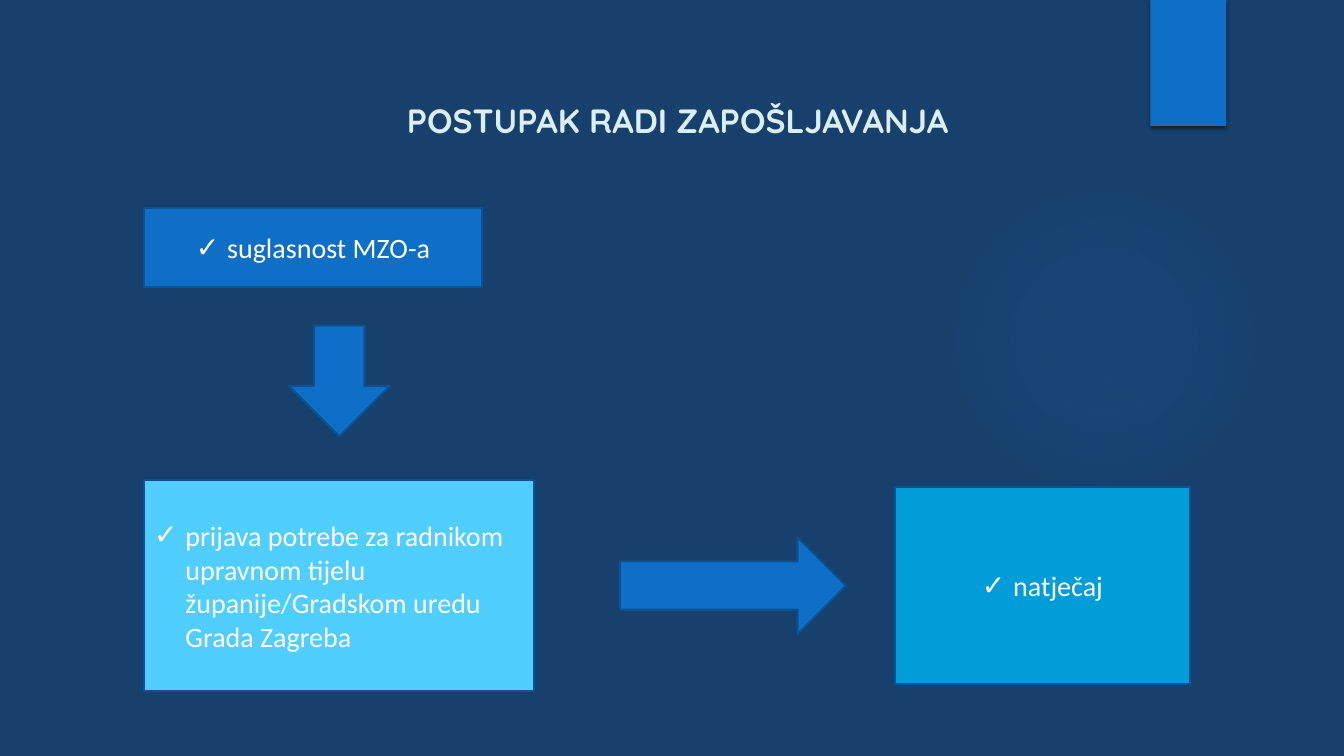
from collections import namedtuple

from lxml.etree import SubElement
from pptx import Presentation
from pptx.dml.color import RGBColor
from pptx.enum.shapes import MSO_SHAPE
from pptx.enum.text import MSO_ANCHOR, PP_ALIGN
from pptx.oxml import parse_xml
from pptx.oxml.ns import nsdecls, qn
from pptx.util import Inches, Pt

COLORS = {
    "background": "17406D", "title": "DBEFF9", "text": "FFFFFF",
    "outline": "0B5292", "blue": "0F6FC6", "sky": "4FCEFF",
    "cyan": "009DD9", "glow": "448AD7", "shadow": "000000",
}
TITLE_FONT = {"name": "Quicksand", "size": Pt(24), "bold": True}
STEP_FONT = {"name": "Calibri", "size": Pt(20), "bold": False}
Box = namedtuple("Box", "left top width height")


def color(name):
    """Return the named palette colour."""
    return RGBColor.from_string(COLORS[name])


def within(area, left, top, width, height):
    """Turn percentages of an area into a box on the slide."""
    return Box(
        int(area.left + area.width * left / 100),
        int(area.top + area.height * top / 100),
        int(area.width * width / 100),
        int(area.height * height / 100),
    )


def format_font(font, values, color_name):
    """Apply a dict of font values and a colour."""
    for attribute, value in values.items():
        setattr(font, attribute, value)
    font.color.rgb = color(color_name)


def add_block(slide, preset, box, fill, outline=None):
    """Add a flat preset shape with an optional outline."""
    block = slide.shapes.add_shape(preset, *box)
    block.shadow.inherit = False
    block.fill.solid()
    block.fill.fore_color.rgb = color(fill)
    if outline:
        block.line.color.rgb = color(outline)
        block.line.width = Pt(1.5)
    else:
        block.line.fill.background()
    return block


def add_step(slide, box, text, fill, alignment):
    """Add a procedure step with a check-marked text."""
    step = add_block(slide, MSO_SHAPE.RECTANGLE, box, fill, "outline")
    frame = step.text_frame
    frame.word_wrap = True
    frame.vertical_anchor = MSO_ANCHOR.MIDDLE
    paragraph = frame.paragraphs[0]
    paragraph.text = text
    paragraph.alignment = alignment
    properties = paragraph._p.get_or_add_pPr()
    properties.set("marL", str(Inches(0.31)))
    properties.set("indent", str(-Inches(0.31)))
    SubElement(properties, qn("a:buFont"), typeface="Wingdings 2")
    properties[-1].set("typeface", "Arial")
    SubElement(properties, qn("a:buChar"), char="✓")
    format_font(paragraph.runs[0].font, STEP_FONT, "text")


def add_decoration(slide, area):
    """Add the soft glow and the hanging ribbon."""
    glow = add_block(slide, MSO_SHAPE.OVAL, within(area, 70.59, 24.4, 23.11, 41.07), "glow")
    stops = "".join(
        f'<a:gs pos="{position * 1000}"><a:srgbClr val="{COLORS["glow"]}">'
        f'<a:alpha val="{opacity * 1000}"/></a:srgbClr></a:gs>'
        for position, opacity in ((0, 7), (36, 6), (69, 0), (100, 0))
    )
    solid = glow._element.spPr.find(qn("a:solidFill"))
    solid.getparent().replace(solid, parse_xml(
        f'<a:gradFill {nsdecls("a")}><a:gsLst>{stops}</a:gsLst><a:path path="circle">'
        '<a:fillToRect l="50000" t="50000" r="50000" b="50000"/></a:path></a:gradFill>'
    ))

    ribbon = add_block(slide, MSO_SHAPE.RECTANGLE, within(area, 85.6, 0, 5.63, 16.67), "blue")
    effects = ribbon._element.spPr.find(qn("a:effectLst"))
    effects.append(parse_xml(
        f'<a:outerShdw {nsdecls("a")} blurRad="{Pt(3)}" dist="{Pt(2)}" dir="5400000" '
        f'rotWithShape="0"><a:srgbClr val="{COLORS["shadow"]}">'
        '<a:alpha val="45000"/></a:srgbClr></a:outerShdw>'
    ))


def add_title(slide, box):
    """Place and format the slide title."""
    title = slide.shapes.title
    for attribute, value in box._asdict().items():
        setattr(title, attribute, value)
    frame = title.text_frame
    frame.word_wrap = True
    frame.vertical_anchor = MSO_ANCHOR.MIDDLE
    frame.margin_bottom = Inches(0.25)
    frame.margin_right = Inches(0.2)
    paragraph = frame.paragraphs[0]
    paragraph.text = "POSTUPAK RADI ZAPOŠLJAVANJA"
    paragraph.alignment = PP_ALIGN.CENTER
    format_font(paragraph.runs[0].font, TITLE_FONT, "title")


def add_procedure(slide, area):
    """Add the three hiring steps and the arrows between them."""
    consent = within(area, 0, 0, 32.3, 16.46)
    request = within(area, 0, 56.25, 37.32, 43.75)
    competition = within(area, 71.84, 57.81, 28.16, 40.63)
    steps = (
        (consent, "suglasnost MZO-a", "blue", PP_ALIGN.CENTER),
        (request, "prijava potrebe za radnikom upravnom tijelu "
                  "županije/Gradskom uredu Grada Zagreba", "sky", PP_ALIGN.LEFT),
        (competition, "natječaj", "cyan", PP_ALIGN.CENTER),
    )
    for step in steps:
        add_step(slide, *step)

    down = within(area, 0, 24.38, 9.64, 22.92)
    down = down._replace(left=request.left + (request.width - down.width) // 2)
    across = within(area, 45.52, 0, 21.6, 20)
    across = across._replace(top=request.top + (request.height - across.height) // 2)
    for preset, box in ((MSO_SHAPE.DOWN_ARROW, down), (MSO_SHAPE.RIGHT_ARROW, across)):
        add_block(slide, preset, box, "blue", "outline")


def main():
    """Build and save the presentation."""
    presentation = Presentation()
    presentation.slide_width = Inches(13.33)
    presentation.slide_height = Inches(7.5)
    slide = presentation.slides.add_slide(presentation.slide_layouts[5])
    slide.background.fill.solid()
    slide.background.fill.fore_color.rgb = color("background")
    page = Box(0, 0, presentation.slide_width, presentation.slide_height)
    add_decoration(slide, page)
    add_title(slide, within(page, 18.83, 7.07, 63.92, 20.4))
    add_procedure(slide, within(page, 10.73, 27.47, 77.79, 64))
    presentation.save("out.pptx")


if __name__ == "__main__":
    main()
